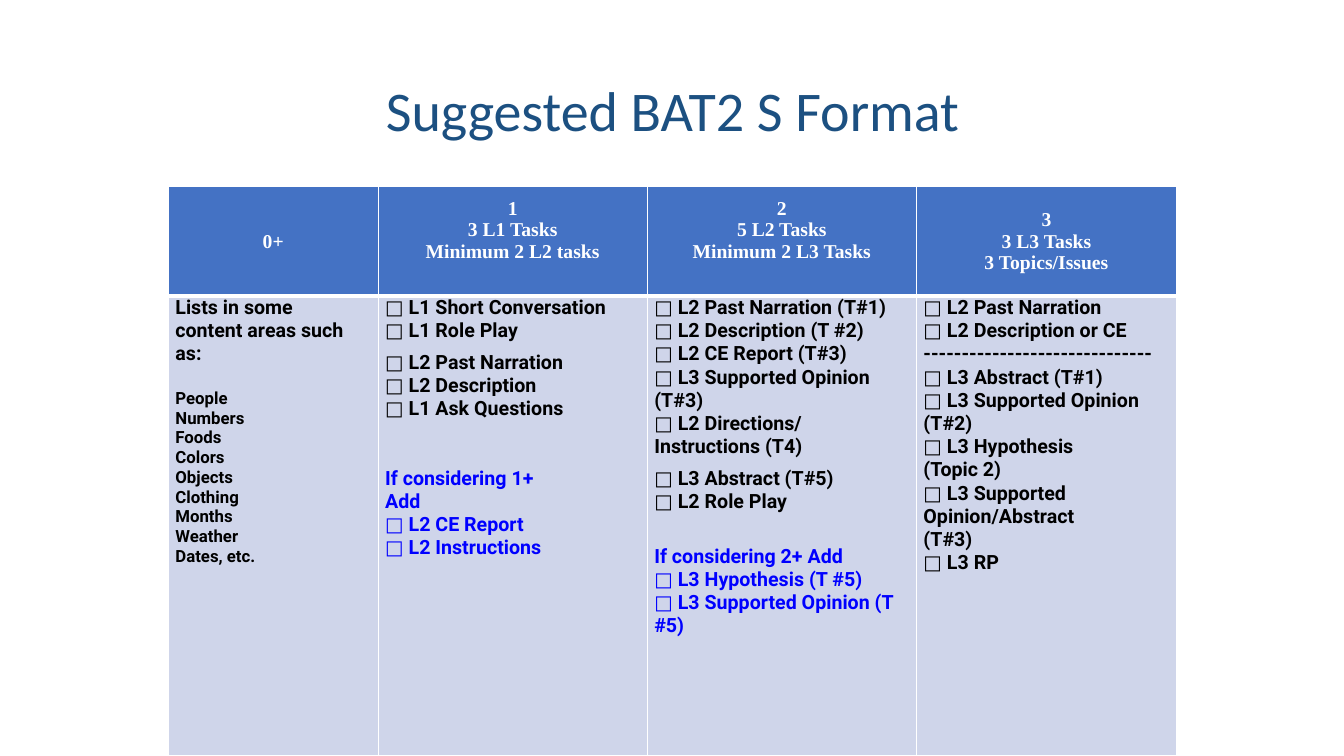
from dataclasses import dataclass
from pptx import Presentation
from pptx.dml.color import RGBColor as Rgb
from pptx.enum.text import MSO_ANCHOR as Anchor, PP_ALIGN as Align
from pptx.oxml.ns import qn
from pptx.util import Inches, Pt
from lxml.etree import SubElement as Sub


@dataclass(frozen=True)
class Theme:
    navy: str = "1C5081"
    blue: str = "4472C4"
    pale: str = "CFD5EA"
    white: str = "FFFFFF"
    black: str = "000000"
    link: str = "0000FF"
    title: int = 40
    text: int = 14
    small: int = 12


LOOK = Theme()
HEAD = dict(name="Times New Roman", size=LOOK.text, bold=True, color=LOOK.white)
BODY = dict(name="Roboto", size=LOOK.text, bold=True, color=LOOK.black)
SMALL = BODY | dict(size=LOOK.small)
ADD = BODY | dict(color=LOOK.link)

# Header cells: lines and bottom margin
HEADS = [
    (["0+"], 0),
    (["1", "3 L1 Tasks", "Minimum 2 L2 tasks"], 0.22),
    (["2", "5 L2 Tasks", "Minimum 2 L3 Tasks"], 0.22),
    (["3", "3 L3 Tasks", "3 Topics/Issues"], 0),
]
# Body cells: groups of space before, format and lines
TASKS = [
    [(0, BODY, ["Lists in some", "content areas such as:"]),
     (16.5, SMALL, ["People", "Numbers", "Foods", "Colors", "Objects",
                    "Clothing", "Months", "Weather", "Dates, etc."])],
    [(0, BODY, ["□ L1 Short Conversation", "□ L1 Role Play"]),
     (6, BODY, ["□ L2 Past Narration", "□ L2 Description",
                "□ L1 Ask Questions"]),
     (33, ADD, ["If considering 1+", "Add", "□ L2 CE Report",
                "□ L2 Instructions"])],
    [(0, BODY, ["□ L2 Past Narration (T#1)", "□ L2 Description (T #2)",
                "□ L2 CE Report (T#3)", "□ L3 Supported Opinion (T#3)",
                "□ L2 Directions/", "Instructions (T4)"]),
     (6, BODY, ["□ L3 Abstract (T#5)", "□ L2 Role Play"]),
     (22.5, ADD, ["If considering 2+ Add", "□ L3 Hypothesis (T #5)",
                  "□ L3 Supported Opinion (T #5)"])],
    [(0, BODY, ["□ L2 Past Narration", "□ L2 Description or CE", "-" * 30,
                "□ L3 Abstract (T#1)", "□ L3 Supported Opinion (T#2)",
                "□ L3 Hypothesis", "(Topic 2)",
                "□ L3 Supported Opinion/Abstract", "(T#3)", "□ L3 RP"])],
]


class Deck:
    def __init__(self, look):
        self.look = look
        self.show = Presentation()
        self.show.slide_width = Inches(13.33)
        self.show.slide_height = Inches(7.5)
        self.slide = self.show.slides.add_slide(self.show.slide_layouts[6])

    def text(self, frame, groups, align):
        first = True
        for gap, form, lines in groups:
            for i, line in enumerate(lines):
                para = frame.paragraphs[0] if first else frame.add_paragraph()
                first = False
                para.alignment = align
                if gap and i == 0:
                    para.space_before = Pt(gap)
                run = para.add_run()
                run.text = line
                for key, val in form.items():
                    if key == "color":
                        run.font.color.rgb = Rgb.from_string(val)
                    else:
                        setattr(run.font, key, Pt(val) if key == "size" else val)

    def title(self, text, *box):
        frame = self.slide.shapes.add_textbox(*map(Inches, box)).text_frame
        frame.word_wrap = True
        frame.vertical_anchor = Anchor.MIDDLE
        form = dict(name="Calibri", size=self.look.title, color=self.look.navy)
        self.text(frame, [(0, form, [text])], Align.CENTER)
        frame.paragraphs[0].line_spacing = 0.9

    def edge(self, cell, widths):
        props = cell._tc.get_or_add_tcPr()
        for side, width in zip("LRTB", widths):
            line = Sub(props, qn(f"a:ln{side}"), w=str(Pt(width)))
            fill = Sub(line, qn("a:solidFill"))
            Sub(fill, qn("a:srgbClr"), val=self.look.white)

    def cell(self, cell, groups, fill, widths, align, anchor, base=0):
        form = dict(margin_left=Inches(0.07), margin_right=Inches(0.07),
                    margin_top=0, margin_bottom=Inches(base),
                    vertical_anchor=anchor)
        for key, val in form.items():
            setattr(cell, key, val)
        self.edge(cell, widths)
        cell.fill.solid()
        cell.fill.fore_color.rgb = Rgb.from_string(fill)
        self.text(cell.text_frame, groups, align)

    def table(self, heads, tasks, cols, rows, *box):
        grid = self.slide.shapes.add_table(
            len(rows), len(cols), *map(Inches, box)).table
        grid.horz_banding = False
        for col, width in zip(grid.columns, cols):
            col.width = Inches(width)
        for row, height in zip(grid.rows, rows):
            row.height = Inches(height)
        for i, ((lines, base), groups) in enumerate(zip(heads, tasks)):
            self.cell(grid.cell(0, i), [(0, HEAD, lines)], self.look.blue,
                      (1, 1, 1, 3), Align.CENTER, Anchor.MIDDLE, base)
            self.cell(grid.cell(1, i), groups, self.look.pale,
                      (1, 1, 3, 1), Align.LEFT, Anchor.TOP)


def main():
    deck = Deck(LOOK)
    # Heading
    deck.title("Suggested BAT2 S Format", 0.92, 0.4, 11.5, 1.45)
    # Tasks by level
    deck.table(HEADS, TASKS, (2.08, 2.67, 2.67, 2.58), (1.09, 4.56),
               1.67, 1.85, 10, 5.65)
    deck.show.save("out.pptx")


if __name__ == "__main__":
    main()
